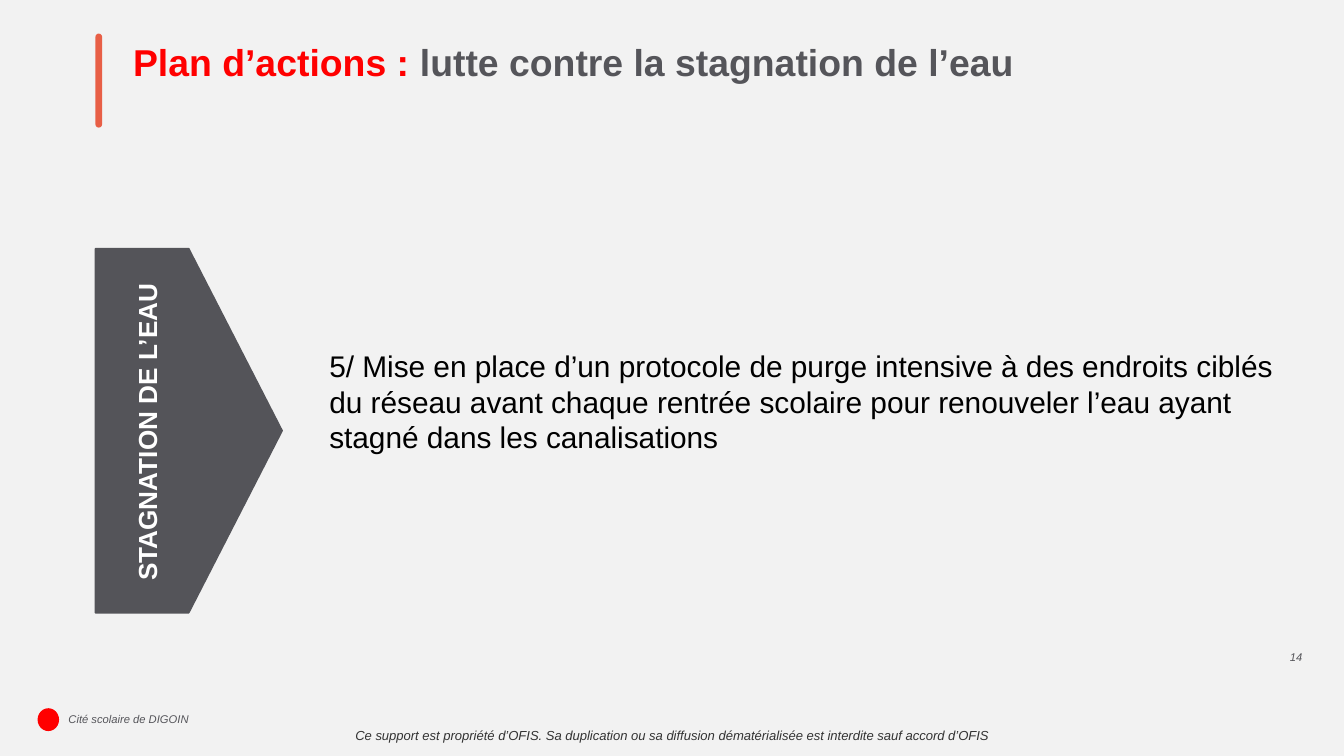
from pptx import Presentation
from pptx.dml.color import RGBColor
from pptx.enum.shapes import MSO_SHAPE
from pptx.enum.text import MSO_ANCHOR, MSO_AUTO_SIZE, PP_ALIGN
from pptx.util import Inches, Pt

LEFT, CENTER, RIGHT = PP_ALIGN.LEFT, PP_ALIGN.CENTER, PP_ALIGN.RIGHT
TOP, MIDDLE = MSO_ANCHOR.TOP, MSO_ANCHOR.MIDDLE
OVAL, PENTAGON, ROUNDED = MSO_SHAPE.OVAL, MSO_SHAPE.PENTAGON, MSO_SHAPE.ROUNDED_RECTANGLE
NO_AUTOFIT = MSO_AUTO_SIZE.NONE
FONT = "Arial"
COLORS = {
    "background": "F2F2F2",
    "red": "FF0000",
    "accent": "E85F46",
    "arrow": "545459",
    "grey": "55555A",
    "notice": "333333",
    "black": "000000",
    "white": "FFFFFF",
}


def color(name):
    """Return the named palette colour."""
    return RGBColor.from_string(COLORS[name])


def place(shape, left, top, width, height):
    """Move and size a shape, in inches."""
    shape.left, shape.top = Inches(left), Inches(top)
    shape.width, shape.height = Inches(width), Inches(height)


def set_text(shape, runs, size, align=LEFT, anchor=TOP, insets=(0.1,) * 4, bold=False, italic=False):
    """Write (text, colour) runs in the first paragraph of a shape."""
    frame = shape.text_frame
    frame.word_wrap = True
    frame.auto_size = NO_AUTOFIT
    frame.vertical_anchor = anchor
    frame.margin_left, frame.margin_top, frame.margin_right, frame.margin_bottom = map(Inches, insets)
    paragraph = frame.paragraphs[0]
    paragraph.alignment = align
    for text, color_name in runs:
        run = paragraph.add_run()
        run.text = text
        run.font.name = FONT
        run.font.size = Pt(size)
        run.font.bold = bold
        run.font.italic = italic
        run.font.color.rgb = color(color_name)


def add_text(slide, box, text, size, color_name, **options):
    """Add a text box holding one run and return it."""
    shape = slide.shapes.add_textbox(*map(Inches, box))
    set_text(shape, [(text, color_name)], size, **options)
    return shape


def add_filled_shape(slide, kind, box, color_name):
    """Add a flat preset shape without outline and return it."""
    shape = slide.shapes.add_shape(kind, *map(Inches, box))
    shape.shadow.inherit = False
    shape.fill.solid()
    shape.fill.fore_color.rgb = color(color_name)
    shape.line.fill.background()
    return shape


def add_footer(slide, left, top, width):
    """Add the ownership notice, site name, round mark and page number."""
    add_text(slide, (left, top + 0.47, width, 0.26),
             "Ce support est propriété d’OFIS. Sa duplication ou sa diffusion "
             "dématérialisée est interdite sauf accord d’OFIS",
             7, "notice", align=CENTER, italic=True)
    add_text(slide, (left + 0.45, top + 0.44, 2.46, 0.14), "Cité scolaire de DIGOIN",
             6, "grey", anchor=MIDDLE, insets=(0.06, 0, 0.1, 0), italic=True)
    add_filled_shape(slide, OVAL, (left + 0.28, top + 0.43, 0.16, 0.17), "red")
    add_text(slide, (left + width - 0.77, top, 0.46, 0.21), "14",
             6, "grey", align=RIGHT, insets=(0,) * 4, italic=True)


def add_heading(slide, left, top, width, height):
    """Add the accent bar and the two-colour title."""
    bar = add_filled_shape(slide, ROUNDED, (left, top + 0.06, 0.05, 0.7), "accent")
    bar.adjustments[0] = 0.5
    title = slide.shapes.title
    place(title, left + 0.18, top, width - 0.18, height)
    set_text(title, [("Plan d’actions : ", "red"), ("lutte contre la stagnation de l’eau", "grey")],
             20, bold=True)


def add_theme_arrow(slide, left, top, width, height):
    """Add the pentagon arrow and its label reading upwards."""
    arrow = add_filled_shape(slide, PENTAGON, (left, top, width, height), "arrow")
    arrow.line.color.rgb = color("arrow")
    arrow.line.width = Pt(0.75)
    label_length, label_depth = 2.73, 0.73
    label_left = left + 0.53 - label_length / 2
    label_top = top + 0.01 + (height - label_depth) / 2
    label = add_text(slide, (label_left, label_top, label_length, label_depth),
                     "STAGNATION DE L’EAU", 14, "white", align=CENTER, bold=True)
    label.rotation = 270


def add_action(slide, left, top, width, height):
    """Add the description of the action."""
    add_text(slide, (left, top, width, height),
             "5/ Mise en place d’un protocole de purge intensive à des endroits ciblés "
             "du réseau avant chaque rentrée scolaire pour renouveler l’eau ayant "
             "stagné dans les canalisations",
             16, "black", anchor=MIDDLE, insets=(0.02, 0.02, 0.02, 0.54))


def main():
    """Build and save the slide."""
    presentation = Presentation()
    presentation.slide_width = Inches(10)
    presentation.slide_height = presentation.slide_width * 9 // 16
    slide = presentation.slides.add_slide(presentation.slide_layouts[5])
    slide.background.fill.solid()
    slide.background.fill.fore_color.rgb = color("background")
    add_footer(slide, 0, 4.84, 10)
    add_heading(slide, 0.71, 0.19, 7.59, 0.94)
    add_theme_arrow(slide, 0.71, 1.85, 1.39, 2.71)
    add_action(slide, 2.43, 1.73, 7.19, 3.03)
    presentation.save("out.pptx")


if __name__ == "__main__":
    main()
